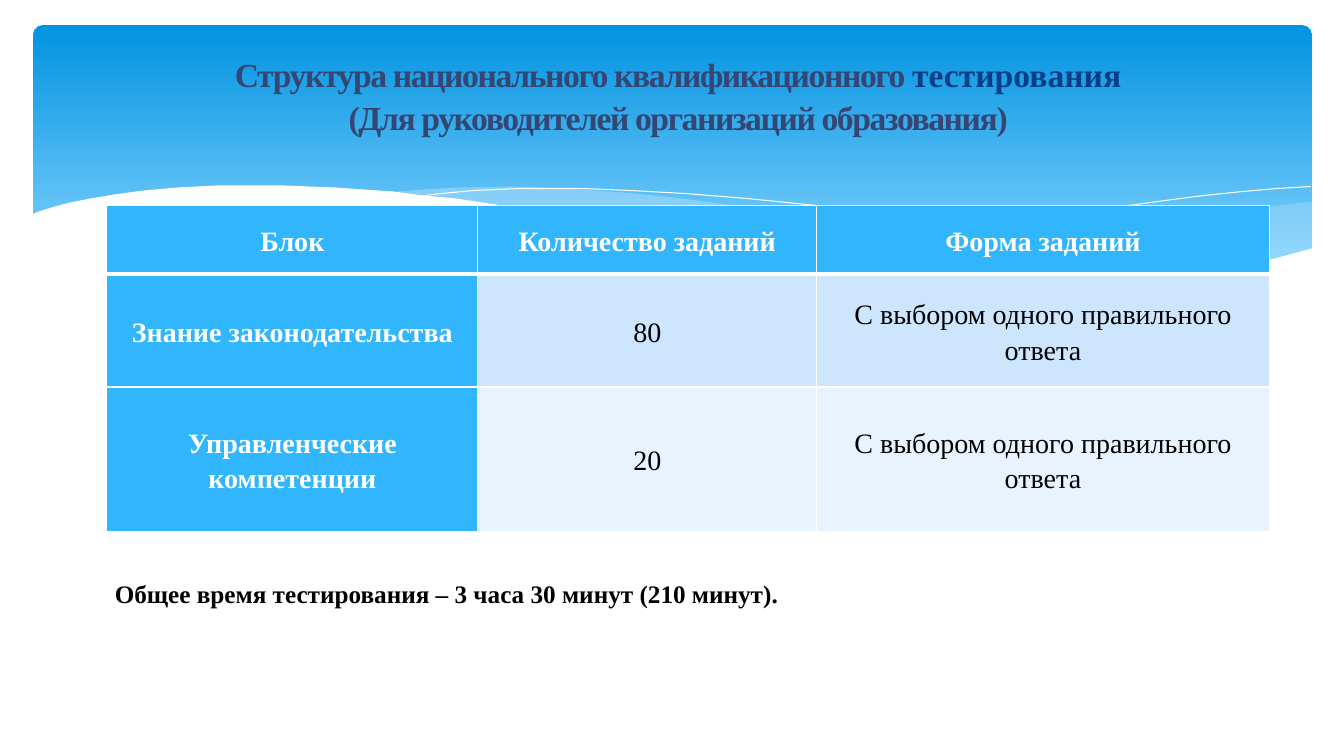
"""Build the slide on the structure of the national qualification test."""
from lxml.etree import SubElement as Sub
from pptx import Presentation
from pptx.dml.color import RGBColor
from pptx.enum.shapes import MSO_SHAPE
from pptx.enum.text import MSO_ANCHOR, MSO_AUTO_SIZE, PP_ALIGN
from pptx.oxml.ns import qn
from pptx.util import Inches, Pt

WHITE = RGBColor(0xFF, 0xFF, 0xFF)
BLACK = RGBColor(0, 0, 0)
DEEP = RGBColor(0x02, 0x93, 0xE0)
LIGHT = RGBColor(0x83, 0xD3, 0xFE)
MIST = RGBColor(0xC6, 0xE7, 0xFC)
SLATE = RGBColor(0x35, 0x46, 0x75)
NAVY = RGBColor(0x07, 0x3E, 0x87)
SKY = RGBColor(0x31, 0xB6, 0xFD)
BANDS = [RGBColor(0xCE, 0xE5, 0xFE), RGBColor(0xE8, 0xF3, 0xFF)]
FONT = "Times New Roman"


def style(run, size, color, bold=True):
    font = run.font
    font.name, font.size, font.bold = FONT, Pt(size), bold
    font.color.rgb = color


def draw(points, close):
    dots = [(Inches(x), Inches(y)) for x, y in points]
    pen = shapes.build_freeform(*dots[0])
    pen.add_line_segments(dots[1:], close=close)
    wave = pen.convert_to_shape()
    wave.shadow.inherit = False
    return wave


prs = Presentation()
prs.slide_width, prs.slide_height = Inches(13.33), Inches(7.5)
slide = prs.slides.add_slide(prs.slide_layouts[5])
shapes = slide.shapes

banner = shapes.add_shape(MSO_SHAPE.ROUNDED_RECTANGLE, Inches(0.33), Inches(0.25),
                          Inches(12.68), Inches(2.7))
banner.adjustments[0] = 0.034
banner.shadow.inherit = False
banner.line.fill.background()
banner.fill.gradient()
banner.fill.gradient_angle = 270
for stop, color, place in zip(banner.fill.gradient_stops, (DEEP, LIGHT), (0, 0.9)):
    stop.color.rgb, stop.position = color, place

right = [(13.01, 2), (12.65, 2.04), (12.27, 2.1), (11.88, 2.16), (11.47, 2.23),
         (10.73, 2.37), (10.05, 2.48), (9.41, 2.57), (8.82, 2.65), (9.21, 2.69),
         (9.76, 2.74), (10.25, 2.77), (10.71, 2.78), (11.26, 2.77), (11.74, 2.73),
         (12.18, 2.67), (12.57, 2.59), (13.01, 2.47)]
middle = [(11.9, 2.73), (11.16, 2.65), (10.34, 2.54), (9.41, 2.4), (8.39, 2.22),
          (7.78, 2.11), (7.21, 2.03), (6.69, 1.96), (6.19, 1.91), (5.6, 1.87),
          (5.06, 1.85), (4.59, 1.86), (4.18, 1.88), (3.82, 1.91), (4.31, 1.96),
          (4.83, 2.03), (5.39, 2.11), (5.99, 2.22), (7.06, 2.4), (8.02, 2.55),
          (8.87, 2.66), (9.63, 2.74), (10.3, 2.77), (10.9, 2.78), (11.43, 2.77)]
front = [(13.03, 2.46), (12.66, 2.56), (12.27, 2.65), (11.83, 2.71), (11.34, 2.75),
         (10.78, 2.77), (10.15, 2.75), (9.44, 2.7), (8.63, 2.62), (7.72, 2.5),
         (6.71, 2.33), (5.96, 2.2), (5.21, 2.07), (4.86, 2.02), (4.53, 1.97),
         (4.21, 1.94), (3.9, 1.9), (3.61, 1.88), (3.33, 1.86), (3.06, 1.85),
         (2.82, 1.84), (2.14, 1.84), (1.76, 1.86), (1.42, 1.89), (1.13, 1.93),
         (0.89, 1.97), (0.69, 2.01), (0.54, 2.05), (0.38, 2.1), (0.31, 2.13),
         (0.31, 3.29), (13.03, 3.29)]
long = [(4.12, 1.95), (4.38, 1.92), (4.7, 1.89), (5.16, 1.87), (5.77, 1.87),
        (6.25, 1.89), (6.8, 1.92), (7.42, 1.97), (8.11, 2.04), (8.86, 2.13),
        (9.7, 2.26), (10.6, 2.41), (11.58, 2.61), (12.1, 2.72)]
short = [(8.18, 2.57), (8.7, 2.46), (9.27, 2.35), (9.97, 2.23), (10.75, 2.1),
         (11.55, 1.99), (11.94, 1.94), (12.32, 1.9), (12.67, 1.87), (13, 1.85)]

for points, color, alpha in ((right, MIST, 29), (middle, MIST, 40), (long, None, 0),
                             (short, None, 0), (front, WHITE, 100)):
    wave = draw(points, color is not None)
    if color is None:
        wave.fill.background()
        wave.line.color.rgb, wave.line.width = WHITE, Pt(0)
        continue
    wave.line.fill.background()
    wave.fill.solid()
    wave.fill.fore_color.rgb = color
    if alpha < 100:
        tint = wave.element.spPr.find(qn("a:solidFill"))[0]
        Sub(tint, qn("a:alpha"), val=str(alpha * 1000))

title = shapes.title
title.element.getparent().append(title.element)
title.left, title.top = Inches(0.37), Inches(0.11)
title.width, title.height = Inches(12.71), Inches(1.65)
frame = title.text_frame
frame.auto_size = MSO_AUTO_SIZE.NONE
frame.vertical_anchor = MSO_ANCHOR.TOP
frame.margin_top = Inches(0.4)
lines = [
    [("Структура национального квалификационного ", SLATE, -100),
     ("тестирования", NAVY, 0)],
    [("(Для руководителей организаций образования)", SLATE, -100)],
]
for i, parts in enumerate(lines):
    para = frame.add_paragraph() if i else frame.paragraphs[0]
    para.alignment, para.line_spacing = PP_ALIGN.CENTER, 1.06
    for text, color, gap in parts:
        run = para.add_run()
        run.text = text
        style(run, 24, color)
        run.font._element.set("spc", str(gap))

note = shapes.add_textbox(Inches(1.04), Inches(5.69), Inches(11.54), Inches(0.4))
note.text_frame.word_wrap = True
note.text_frame.text = "Общее время тестирования – 3 часа 30 минут (210 минут)."
style(note.text_frame.paragraphs[0].runs[0], 18, BLACK)

rows = [
    ("Блок", "Количество заданий", "Форма заданий"),
    ("Знание законодательства", "80", "С выбором одного правильного ответа"),
    ("Управленческие компетенции", "20", "С выбором одного правильного ответа"),
]
table = shapes.add_table(3, 3, Inches(1.06), Inches(2.04),
                         Inches(11.53), Inches(3.23)).table
for col, width in zip(table.columns, (3.68, 3.36, 4.49)):
    col.width = Inches(width)
for row, height in zip(table.rows, (0.68, 1.12, 1.43)):
    row.height = Inches(height)
for r, texts in enumerate(rows):
    for c, text in enumerate(texts):
        cell = table.cell(r, c)
        head = r == 0 or c == 0
        cell.text_frame.text = text
        cell.vertical_anchor = MSO_ANCHOR.MIDDLE
        cell.margin_left = cell.margin_right = Inches(0.07)
        cell.margin_top = cell.margin_bottom = 0
        para = cell.text_frame.paragraphs[0]
        para.alignment, para.line_spacing = PP_ALIGN.CENTER, 1.15
        style(para.runs[0], 20, WHITE if head else BLACK, head)
        props = cell._tc.get_or_add_tcPr()
        for side in "LRTB":
            thick = (side, r) in (("B", 0), ("T", 1))
            edge = Sub(props, qn(f"a:ln{side}"), w=str(Pt(3 if thick else 1)))
            Sub(Sub(edge, qn("a:solidFill")), qn("a:srgbClr"), val=str(WHITE))
        cell.fill.solid()
        cell.fill.fore_color.rgb = SKY if head else BANDS[r - 1]

prs.save("out.pptx")
